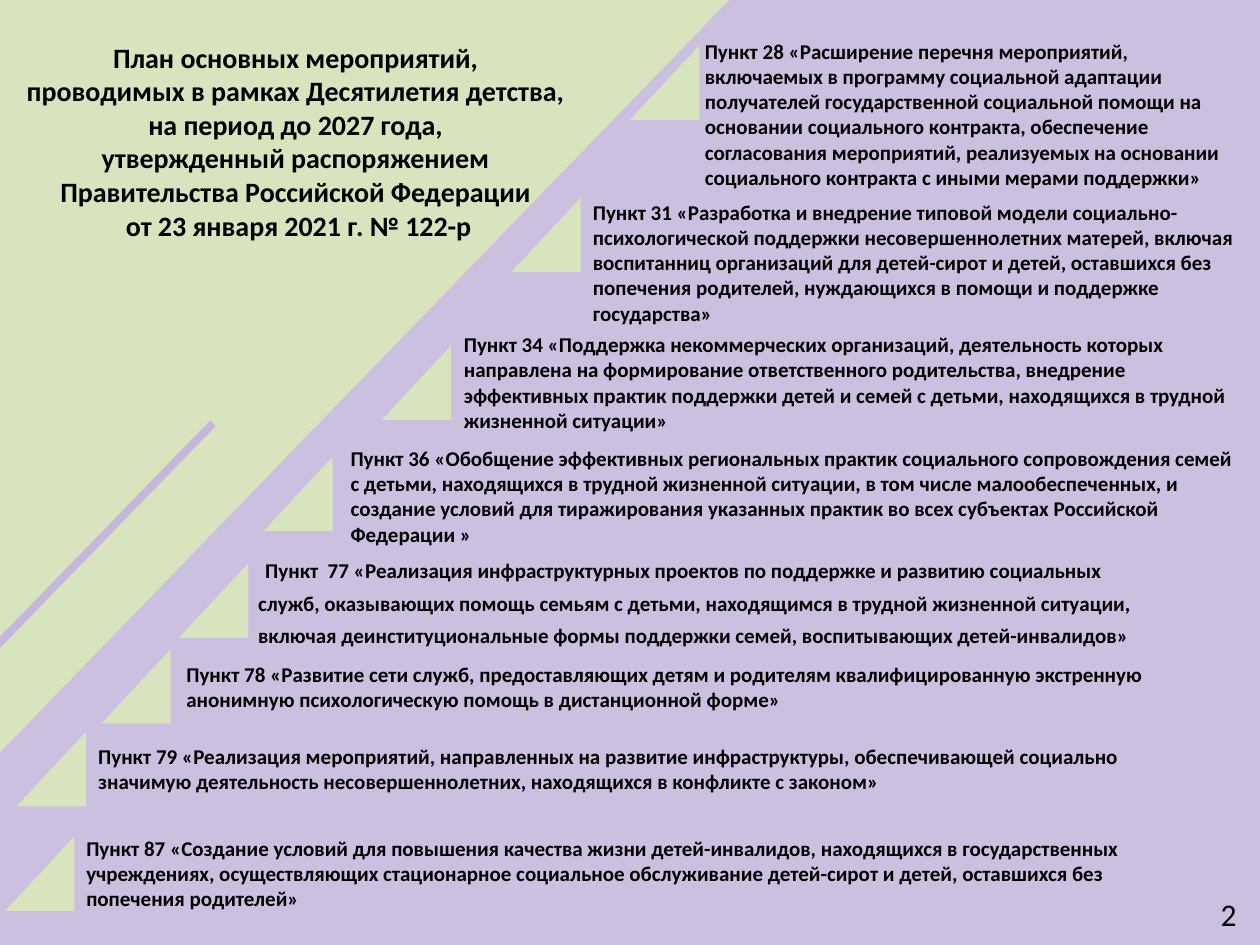
from lxml.etree import SubElement
from pptx import Presentation
from pptx.dml.color import RGBColor
from pptx.enum.shapes import MSO_CONNECTOR as Connector, MSO_SHAPE as Shape
from pptx.enum.text import MSO_ANCHOR as Anchor, MSO_AUTO_SIZE as AutoSize, PP_ALIGN as Align
from pptx.oxml.ns import qn
from pptx.util import Pt

LILAC, STRIPE, GREEN, BLACK = "CCC0E0", "C4B7DB", "D7E4BD", "000000"
MARKER_SIZE = (39.6, 42.5)
HEADING = [
    "План основных мероприятий, ",
    "проводимых в рамках Десятилетия детства, ",
    "на период до 2027 года, ",
    "утвержденный распоряжением ",
    "Правительства Российской Федерации ",
    "от 23 января 2021 г. № 122-р",
]
ITEMS = [
    ((360, 26), (395.7, 18.3, 324, 94.3), "Пункт 28 «Расширение перечня мероприятий, включаемых в программу социальной адаптации получателей государственной социальной помощи на основании социального контракта, обеспечение согласования мероприятий, реализуемых на основании социального контракта с иными мерами поддержки»"),
    ((292.2, 113), (331.7, 110.4, 386.6, 80), "Пункт 31 «Разработка и внедрение типовой модели социально-психологической поддержки несовершеннолетних матерей, включая воспитанниц организаций для детей-сирот и детей, оставшихся без попечения родителей, нуждающихся в помощи и поддержке государства»"),
    ((218.2, 197.4), (258, 186, 460, 65.4), "Пункт 34 «Поддержка некоммерческих организаций, деятельность которых направлена на формирование ответственного родительства, внедрение эффективных практик поддержки детей и семей с детьми, находящихся в трудной жизненной ситуации»"),
    ((150.5, 261), (193.2, 251, 525, 65.4), "Пункт 36 «Обобщение эффективных региональных практик социального сопровождения семей с детьми, находящихся в трудной жизненной ситуации, в том числе малообеспеченных, и создание условий для тиражирования указанных практик во всех субъектах Российской Федерации »"),
    ((102.2, 322), (140.4, 312.5, 518.4, 62), "Пункт  77 «Реализация инфраструктурных проектов по поддержке и развитию социальных служб, оказывающих помощь семьям с детьми, находящимся в трудной жизненной ситуации, включая деинституциональные формы поддержки семей, воспитывающих детей-инвалидов»"),
    ((57.9, 371), (99.4, 374.4, 574.6, 36), "Пункт 78 «Развитие сети служб, предоставляющих детям и родителям квалифицированную экстренную анонимную психологическую помощь в дистанционной форме»"),
    ((9.4, 418.3), (49, 421.2, 615.6, 36), "Пункт 79 «Реализация мероприятий, направленных на развитие инфраструктуры, обеспечивающей социально значимую деятельность несовершеннолетних, находящихся в конфликте с законом»"),
    ((2.9, 478), (42.2, 473.8, 654.5, 51), "Пункт 87 «Создание условий для повышения качества жизни детей-инвалидов, находящихся в государственных учреждениях, осуществляющих стационарное социальное обслуживание детей-сирот и детей, оставшихся без попечения родителей»"),
]
SPACED_ITEM = "Пункт  77"


def color(value):
    """Turn a hex string into a colour."""
    return RGBColor.from_string(value)


def points(box):
    """Turn numbers into lengths in points."""
    return [Pt(value) for value in box]


def apply(target, formats):
    """Set each named attribute on the target."""
    for name, value in formats.items():
        setattr(target, name, value)


def add_span(para, text, size, bold=True):
    """Add a formatted run to a paragraph."""
    span = para.add_run()
    span.text = text
    apply(span.font, {"name": "Calibri", "size": Pt(size), "bold": bold})
    span.font.color.rgb = color(BLACK)


def add_triangle(page, box, apex, rotation=0):
    """Draw a plain green triangle."""
    triangle = page.shapes.add_shape(Shape.ISOSCELES_TRIANGLE, *points(box))
    triangle.adjustments[0] = apex
    triangle.rotation = rotation
    triangle.shadow.inherit = False
    triangle.fill.solid()
    triangle.fill.fore_color.rgb = color(GREEN)
    triangle.line.fill.background()


def add_backdrop(page, box):
    """Fill the page, then lay the large corner triangle and its stripe."""
    left, top, width, height = box
    page.background.fill.solid()
    page.background.fill.fore_color.rgb = color(LILAC)
    add_triangle(page, (left - 202.3, top - 44.6, 603.4, 305.3), 0.507, 314.1)
    ends = (left - 2.9, top + 370, left + 121.7, top + 241.9)
    stripe = page.shapes.add_connector(Connector.STRAIGHT, *points(ends))
    stripe.line.color.rgb = color(STRIPE)
    stripe.line.width = Pt(4.5)
    SubElement(stripe._element.spPr, qn("a:effectLst"))


def add_heading(page, box):
    """Place the centred heading in the title placeholder, above the backdrop."""
    title = page.shapes.title
    page.shapes._spTree.append(title._element)
    apply(title, dict(zip(("left", "top", "width", "height"), points(box))))
    frame = title.text_frame
    apply(frame, {"word_wrap": True, "auto_size": AutoSize.NONE, "vertical_anchor": Anchor.TOP})
    for index, text in enumerate(HEADING):
        para = frame.add_paragraph() if index else frame.paragraphs[0]
        para.alignment = Align.CENTER
        add_span(para, text, 16)


def add_item(page, corner, box, text):
    """Place one plan item and its triangular marker."""
    add_triangle(page, (*corner, *MARKER_SIZE), 1)
    frame = page.shapes.add_textbox(*points(box)).text_frame
    frame.word_wrap = True
    para = frame.paragraphs[0]
    if text.startswith(SPACED_ITEM):
        para.line_spacing = Pt(18)
        add_span(para, " ", 18, False)
    add_span(para, text, 12)


def add_page_number(page, box):
    """Place the page number."""
    frame = page.shapes.add_textbox(*points(box)).text_frame
    frame.word_wrap = False
    add_span(frame.paragraphs[0], "2", 18, False)


def main():
    """Build and save the deck."""
    deck = Presentation()
    apply(deck, {"slide_width": Pt(720), "slide_height": Pt(540)})
    page = deck.slides.add_slide(deck.slide_layouts[5])
    add_backdrop(page, (0, 0, 720, 540))
    add_heading(page, (-23, 19.4, 387.4, 123.8))
    for item in ITEMS:
        add_item(page, *item)
    add_page_number(page, (690.5, 508, 23.8, 28.8))
    deck.save("out.pptx")


if __name__ == "__main__":
    main()
